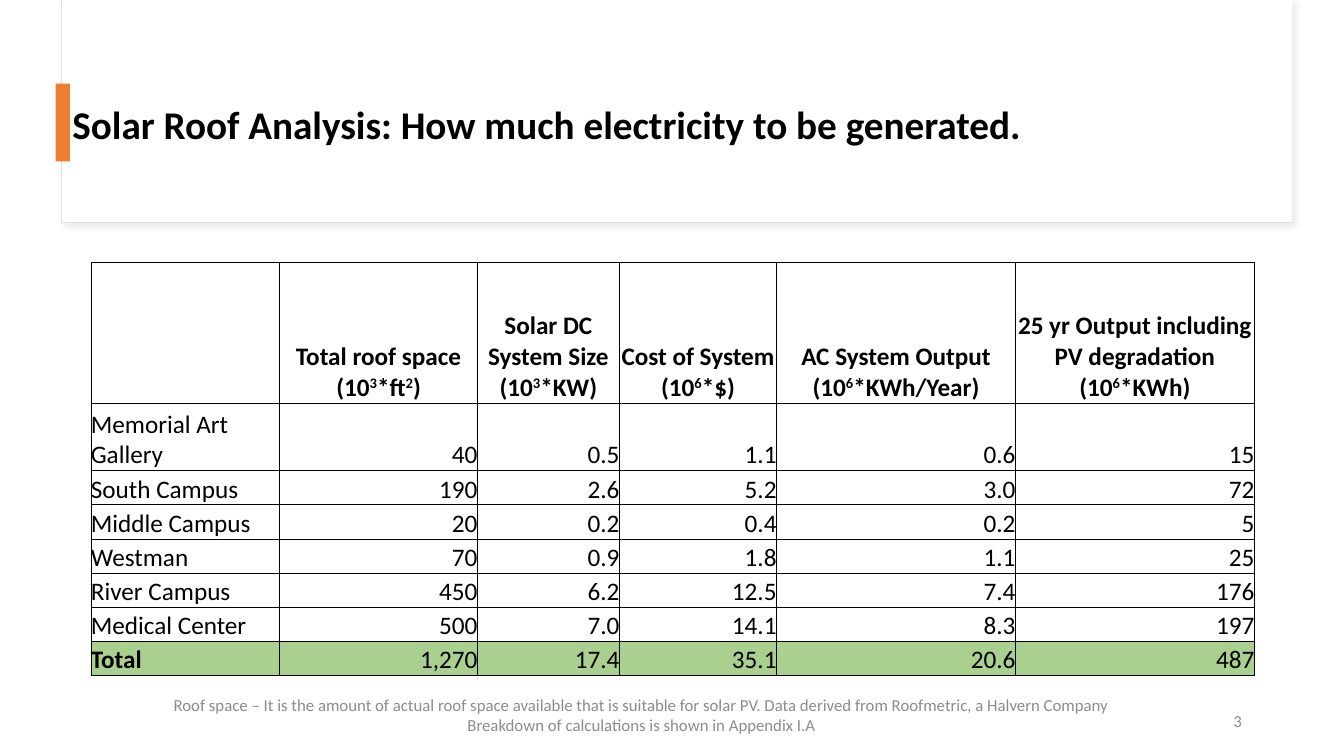
from dataclasses import dataclass
from itertools import product
from typing import Any, Optional

from lxml.etree import SubElement
from pptx import Presentation
from pptx.dml.color import RGBColor
from pptx.enum.shapes import MSO_SHAPE
from pptx.enum.text import MSO_ANCHOR, MSO_AUTO_SIZE, PP_ALIGN
from pptx.oxml import parse_xml
from pptx.oxml.ns import nsdecls, qn
from pptx.util import Cm, Pt

WHITE = RGBColor(0xFF, 0xFF, 0xFF)
BLACK = RGBColor(0x00, 0x00, 0x00)
ORANGE = RGBColor(0xED, 0x7D, 0x31)
GREEN = RGBColor(0xA9, 0xD0, 0x8E)
GREY = RGBColor(0x8C, 0x8C, 0x8C)
PALE = RGBColor(0xE1, 0xE1, 0xE1)

TITLE_FONT = {"name": "Calibri", "size": Pt(28), "bold": True}
HEAD_FONT = {"name": "Calibri", "size": Pt(18), "bold": True}
CELL_FONT = {**HEAD_FONT, "bold": False}
NOTE_FONT = {"name": "Calibri", "size": Pt(12)}
CELL_FORMAT = {
    "margin_left": 0, "margin_right": 0, "margin_top": 0, "margin_bottom": 0,
    "vertical_anchor": MSO_ANCHOR.BOTTOM,
}
FRAME_FORMAT = {
    "word_wrap": True, "auto_size": MSO_AUTO_SIZE.NONE,
    "vertical_anchor": MSO_ANCHOR.MIDDLE,
}


@dataclass(frozen=True)
class Box:
    left: float
    top: float
    width: float
    height: float

    def lengths(self) -> tuple:
        return Cm(self.left), Cm(self.top), Cm(self.width), Cm(self.height)


@dataclass(frozen=True)
class Panel:
    box: Box
    fill: RGBColor
    line: Optional[RGBColor] = None
    shadow: bool = False


@dataclass(frozen=True)
class Note:
    box: Box
    lines: tuple
    align: PP_ALIGN


@dataclass(frozen=True)
class Header:
    label: str
    power: str
    unit: str
    unit_power: str = ""

    def runs(self) -> list:
        return [(f"{self.label} (10", False), (self.power, True),
                (f"*{self.unit}", False), (self.unit_power, True), (")", False)]


TITLE_BOX = Box(1.57, 1.55, 31.4, 3.28)
BACK_PANELS = [
    Panel(Box(1.55, 0, 31.01, 5.61), WHITE, PALE, True),
    Panel(Box(1.57, 0, 30.99, 5.59), WHITE),
]
ACCENT = Panel(Box(1.4, 2.11, 0.36, 1.96), ORANGE)

COLUMN_WIDTHS = [4.76, 4.98, 3.58, 3.96, 6.02, 6.02]
ROW_HEIGHTS = [3.56, 1.7] + [0.86] * 6
TABLE_BOX = Box(2.29, 6.6, sum(COLUMN_WIDTHS), sum(ROW_HEIGHTS))
HEADERS = [
    Header("Total roof space", "3", "ft", "2"),
    Header("Solar DC System Size", "3", "KW"),
    Header("Cost of System", "6", "$"),
    Header("AC System Output", "6", "KWh/Year"),
    Header("25 yr Output including PV degradation", "6", "KWh"),
]
ROWS = [
    ("Memorial Art Gallery", "40", "0.5", "1.1", "0.6", "15"),
    ("South Campus", "190", "2.6", "5.2", "3.0", "72"),
    ("Middle Campus", "20", "0.2", "0.4", "0.2", "5"),
    ("Westman", "70", "0.9", "1.8", "1.1", "25"),
    ("River Campus", "450", "6.2", "12.5", "7.4", "176"),
    ("Medical Center", "500", "7.0", "14.1", "8.3", "197"),
    ("Total", "1,270", "17.4", "35.1", "20.6", "487"),
]
NOTES = [
    Note(Box(2.34, 17.37, 27.66, 1.3), (
        "Roof space – It is the amount of actual roof space available that is "
        "suitable for solar PV. Data derived from Roofmetric, a Halvern Company",
        "Breakdown of calculations is shown in Appendix I.A",
    ), PP_ALIGN.CENTER),
    Note(Box(23.93, 17.65, 7.62, 1.02), ("3",), PP_ALIGN.RIGHT),
]


def apply(target: Any, values: dict) -> None:
    for name, value in values.items():
        setattr(target, name, value)


def add_run(p: Any, text: str, font: dict, color: RGBColor, raised: bool = False) -> None:
    r = p.add_run()
    r.text = text
    apply(r.font, font)
    r.font.color.rgb = color
    if raised:
        r._r.get_or_add_rPr().set("baseline", "30000")


def add_panel(s: Any, panel: Panel) -> Any:
    sp = s.shapes.add_shape(MSO_SHAPE.RECTANGLE, *panel.box.lengths())
    sp.fill.solid()
    sp.fill.fore_color.rgb = panel.fill
    if panel.line is None:
        sp.line.fill.background()
    else:
        sp.line.color.rgb = panel.line
        sp.line.width = Pt(0.75)
    sp.shadow.inherit = False
    if panel.shadow:
        effects = sp.element.spPr.find(qn("a:effectLst"))
        effects.append(parse_xml(
            f'<a:outerShdw {nsdecls("a")} blurRad="50800" dist="38100" dir="2700000" '
            'algn="tl" rotWithShape="0"><a:srgbClr val="D9D9D9">'
            '<a:alpha val="50000"/></a:srgbClr></a:outerShdw>'))
    return sp


def add_title(s: Any, text: str) -> Any:
    title = s.shapes.title
    title.left, title.top, title.width, title.height = TITLE_BOX.lengths()
    apply(title.text_frame, FRAME_FORMAT)
    p = title.text_frame.paragraphs[0]
    apply(p, {"alignment": PP_ALIGN.LEFT, "line_spacing": 0.9})
    add_run(p, text, TITLE_FONT, BLACK)
    return title


def add_note(s: Any, note: Note) -> None:
    tf = s.shapes.add_textbox(*note.box.lengths()).text_frame
    apply(tf, FRAME_FORMAT)
    for i, text in enumerate(note.lines):
        p = tf.add_paragraph() if i else tf.paragraphs[0]
        p.alignment = note.align
        add_run(p, text, NOTE_FONT, GREY)


def set_borders(cell: Any) -> None:
    tc_pr = cell._tc.get_or_add_tcPr()
    for i, side in enumerate(("lnL", "lnR", "lnT", "lnB")):
        line = SubElement(tc_pr, qn(f"a:{side}"), w=str(Pt(0.5)))
        fill = SubElement(line, qn("a:solidFill"))
        SubElement(fill, qn("a:srgbClr"), val=str(BLACK))
        tc_pr.insert(i, line)


def add_results(s: Any) -> None:
    table = s.shapes.add_table(
        len(ROW_HEIGHTS), len(COLUMN_WIDTHS), *TABLE_BOX.lengths()).table
    apply(table, {"first_row": False, "horz_banding": False})
    for column, width in zip(table.columns, COLUMN_WIDTHS):
        column.width = Cm(width)
    for row, height in zip(table.rows, ROW_HEIGHTS):
        row.height = Cm(height)
    for i, j in product(range(len(ROW_HEIGHTS)), range(len(COLUMN_WIDTHS))):
        cell = table.cell(i, j)
        apply(cell, CELL_FORMAT)
        if i == len(ROWS):
            cell.fill.solid()
            cell.fill.fore_color.rgb = GREEN
        else:
            cell.fill.background()
        set_borders(cell)
        p = cell.text_frame.paragraphs[0]
        if i:
            p.alignment = PP_ALIGN.RIGHT if j else PP_ALIGN.LEFT
            font = HEAD_FONT if (i, j) == (len(ROWS), 0) else CELL_FONT
            add_run(p, ROWS[i - 1][j], font, BLACK)
        elif j:
            p.alignment = PP_ALIGN.CENTER
            for text, raised in HEADERS[j - 1].runs():
                if text:
                    add_run(p, text, HEAD_FONT, BLACK, raised)


def main() -> None:
    prs = Presentation()
    apply(prs, {"slide_width": Cm(33.87), "slide_height": Cm(19.05)})
    s = prs.slides.add_slide(prs.slide_layouts[5])
    title = add_title(s, "Solar Roof Analysis: How much electricity to be generated.")
    for panel in BACK_PANELS:
        title.element.addprevious(add_panel(s, panel).element)
    add_panel(s, ACCENT)
    add_results(s)
    for note in NOTES:
        add_note(s, note)
    prs.save("out.pptx")


if __name__ == "__main__":
    main()
